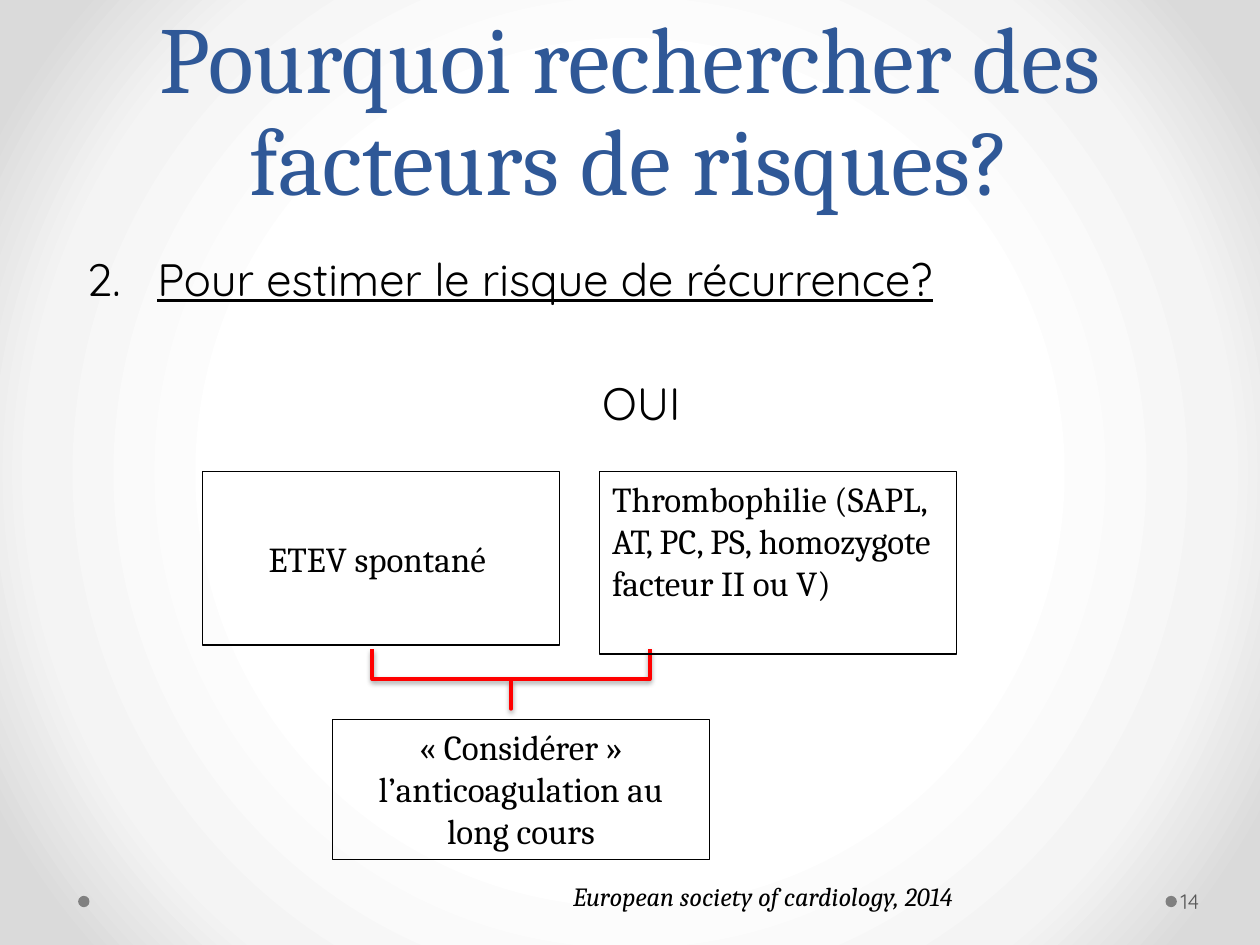
"""Builds the slide on risk factors and the risk of recurrence."""
from dataclasses import dataclass, field
from typing import Optional

from lxml import etree
from pptx import Presentation
from pptx.dml.color import RGBColor
from pptx.enum import shapes, text
from pptx.oxml.ns import qn
from pptx.util import Inches, Pt


@dataclass(frozen=True)
class Theme:
    """Colours, fonts and type sizes of the slide."""
    serif: str = "Cambria"
    sans: str = "Quicksand"
    ink: str = "000000"
    title: str = "2F5897"
    accent: str = "FF0000"
    dot: str = "808080"
    number: str = "595959"
    title_size: float = 54
    lead_size: float = 25.9
    box_size: float = 20
    source_size: float = 15
    number_size: float = 12
    backdrop: tuple = ((50, "FFFFFF"), (76, "F4F4F4"), (92, "DADADA"))


T = Theme()
LEFT, CENTER = text.PP_ALIGN.LEFT, text.PP_ALIGN.CENTER
TOP, MIDDLE, BOTTOM = (text.MSO_ANCHOR.TOP, text.MSO_ANCHOR.MIDDLE,
                       text.MSO_ANCHOR.BOTTOM)


@dataclass(frozen=True)
class Para:
    """One paragraph with its font and paragraph formats."""
    words: str
    size: float
    face: str = T.serif
    color: str = T.ink
    font: dict = field(default_factory=dict)
    layout: dict = field(default_factory=dict)


@dataclass(frozen=True)
class Block:
    """A text area: place in inches, paragraphs, frame formats, outline."""
    at: tuple
    paras: tuple
    frame: dict = field(default_factory=dict)
    outline: Optional[str] = None


def apply(target, formats: dict) -> None:
    """Set each format value on the target."""
    for name, value in formats.items():
        setattr(target, name, value)


def node(parent, tag: str, **attrs):
    """Append a DrawingML element."""
    return etree.SubElement(parent, qn(tag), {k: str(v) for k, v in attrs.items()})


def write(sp, block: Block) -> None:
    """Fill a shape's text frame with a block's paragraphs."""
    tf = sp.text_frame
    apply(tf, {"word_wrap": True, "auto_size": text.MSO_AUTO_SIZE.NONE,
               "vertical_anchor": TOP, **block.frame})
    for i, para in enumerate(block.paras):
        p = tf.add_paragraph() if i else tf.paragraphs[0]
        apply(p, {"alignment": LEFT, **para.layout})
        r = p.add_run()
        r.text = para.words
        apply(r.font, {"size": Pt(para.size), "name": para.face, **para.font})
        r.font.color.rgb = RGBColor.from_string(para.color)


def add_block(s, block: Block):
    """Add a text box, or a rectangle when the block has an outline."""
    at = [Inches(v) for v in block.at]
    if block.outline:
        sp = s.shapes.add_shape(shapes.MSO_SHAPE.RECTANGLE, *at)
        sp.shadow.inherit = False
        sp.fill.background()
        sp.line.color.rgb = RGBColor.from_string(block.outline)
        sp.line.width = Pt(0.75)
    else:
        sp = s.shapes.add_textbox(*at)
    write(sp, block)
    return sp


def add_dot(s, left: float) -> None:
    """Add a footer dot."""
    sp = s.shapes.add_shape(shapes.MSO_SHAPE.OVAL, Inches(left), Inches(7.11),
                            Inches(0.09), Inches(0.09))
    sp.shadow.inherit = False
    sp.fill.solid()
    sp.fill.fore_color.rgb = RGBColor.from_string(T.dot)
    sp.line.fill.background()


def add_brace(s) -> None:
    """Add the red brace that joins both causes to the advice."""
    sp = s.shapes.add_shape(shapes.MSO_SHAPE.RIGHT_BRACE, Inches(3.82),
                            Inches(4.29), Inches(0.47), Inches(2.2))
    sp.rotation = 90
    sp.adjustments[0], sp.adjustments[1] = 0, 0.5
    sp.fill.background()
    sp.line.color.rgb = RGBColor.from_string(T.accent)
    sp.line.width = Pt(2.25)
    sp.shadow.inherit = False
    effects = sp._element.spPr.find(qn("a:effectLst"))
    shadow = node(effects, "a:outerShdw", blurRad=Pt(3.1), dist=Pt(1.6),
                  dir=90 * 60000, rotWithShape=0)
    node(node(shadow, "a:srgbClr", val=T.ink), "a:alpha", val=38000)


def paint_background(s) -> None:
    """Fill the background with a circular gradient."""
    s.background.fill.gradient()
    grad = s.background._cSld.find(".//" + qn("a:gradFill"))
    for child in list(grad):
        grad.remove(child)
    stops = node(grad, "a:gsLst")
    for pos, color in T.backdrop:
        node(node(stops, "a:gs", pos=pos * 1000), "a:srgbClr", val=color)
    node(node(grad, "a:path", path="circle"), "a:fillToRect",
         l=50000, t=50000, r=50000, b=50000)


def number_paragraph(p, start: int, indent: float) -> None:
    """Give a paragraph an automatic number and a hanging indent."""
    pPr = p._p.get_or_add_pPr()
    pPr.set("marL", str(Inches(indent)))
    pPr.set("indent", str(-Inches(indent)))
    node(pPr, "a:buFont", typeface=T.sans)
    node(pPr, "a:buAutoNum", type="arabicPeriod", startAt=start)


TITLE = Block((0.5, 0, 9, 1.75), (
    Para("Pourquoi rechercher des facteurs de risques?", T.title_size,
         color=T.title, layout={"alignment": CENTER, "line_spacing": Pt(58)}),),
    {"vertical_anchor": BOTTOM})
LEAD = Block((0.59, 1.94, 9, 1.42), (
    Para("Pour estimer le risque de récurrence?", T.lead_size, T.sans,
         font={"underline": True}),
    Para("OUI", T.lead_size, T.sans,
         layout={"alignment": CENTER, "space_before": Pt(40)})))
BLOCKS = (
    Block((4.45, 6.94, 4.96, 0.35), (
        Para("European society of cardiology, 2014", T.source_size,
             font={"italic": True}),)),
    Block((9.34, 6.95, 0.61, 0.4), (
        Para("14", T.number_size, T.sans, T.number),),
        {"vertical_anchor": MIDDLE, "margin_left": Inches(0.03),
         "margin_right": Inches(0.05)}),
    Block((2.64, 5.71, 2.99, 1.11), (
        Para("«\u00a0Considérer\u00a0» l’anticoagulation au long cours",
             T.box_size, layout={"alignment": CENTER}),), outline=T.ink),
    Block((1.61, 3.74, 2.83, 1.38), (
        Para("ETEV spontané ", T.box_size, layout={"alignment": CENTER}),),
        {"vertical_anchor": MIDDLE}, T.ink),
    Block((4.76, 3.74, 2.83, 1.45), (
        Para("Thrombophilie (SAPL, AT, PC, PS, homozygote facteur II ou V)",
             T.box_size),), outline=T.ink),
)


def main() -> None:
    """Build and save the slide."""
    prs = Presentation()
    prs.slide_width, prs.slide_height = Inches(10), Inches(7.5)
    s = prs.slides.add_slide(prs.slide_layouts[5])
    paint_background(s)
    title = s.shapes.title
    apply(title, dict(zip(("left", "top", "width", "height"),
                          (Inches(v) for v in TITLE.at))))
    write(title, TITLE)
    for left in (9.25, 0.62):
        add_dot(s, left)
    lead = add_block(s, LEAD)
    number_paragraph(lead.text_frame.paragraphs[0], 2, 0.56)
    add_brace(s)
    for block in BLOCKS:
        add_block(s, block)
    prs.save("out.pptx")


if __name__ == "__main__":
    main()
